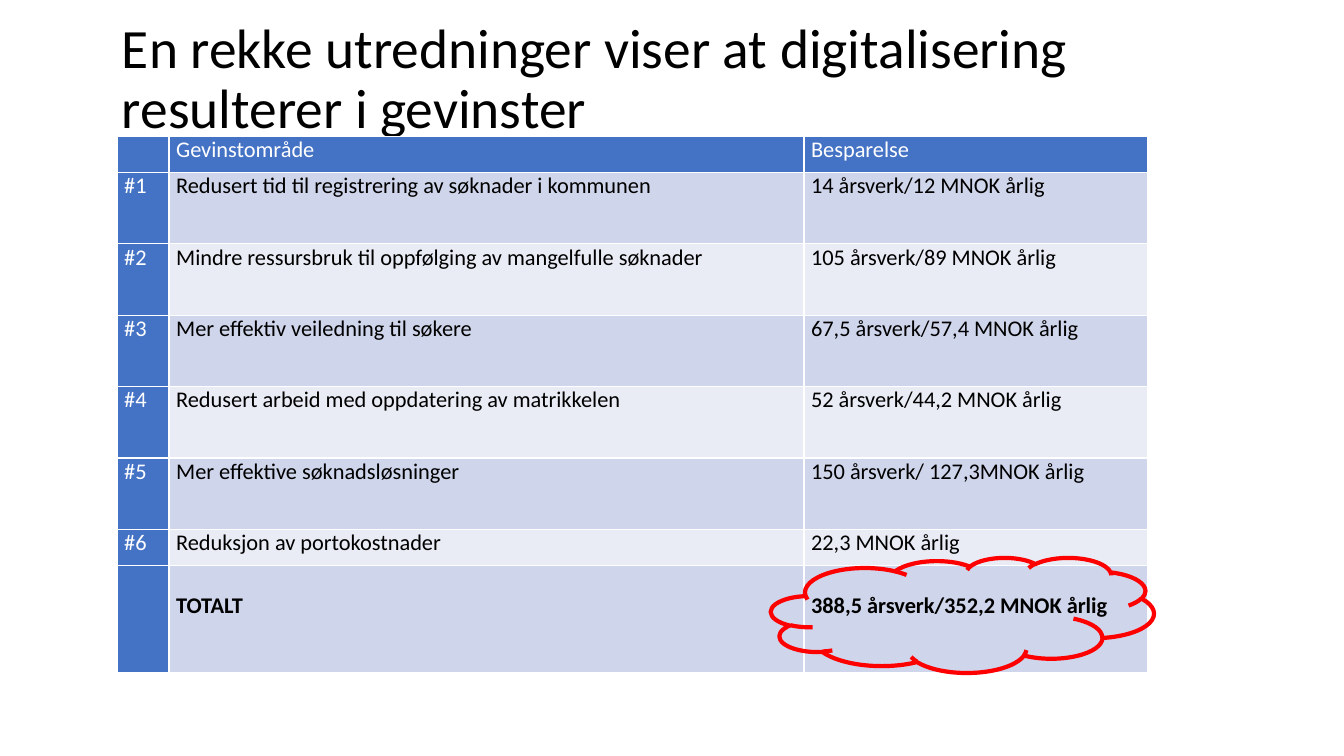
"""Build a slide with a table of yearly savings from digitalisation."""
from pptx import Presentation
from pptx.dml.color import RGBColor
from pptx.enum.shapes import MSO_SHAPE
from pptx.enum.text import MSO_ANCHOR, MSO_AUTO_SIZE, PP_ALIGN
from pptx.util import Cm, Pt

CLOUD = MSO_SHAPE.CLOUD
MIDDLE = MSO_ANCHOR.MIDDLE
NO_AUTOFIT = MSO_AUTO_SIZE.NONE
LEFT = PP_ALIGN.LEFT
TITLE_ONLY = 5

FONT = "Calibri"
BLACK = RGBColor(0x00, 0x00, 0x00)
WHITE = RGBColor(0xFF, 0xFF, 0xFF)
BLUE = RGBColor(0x44, 0x72, 0xC4)
RED = RGBColor(0xFF, 0x00, 0x00)
BANDS = (RGBColor(0xE9, 0xEB, 0xF5), RGBColor(0xCF, 0xD5, 0xEA))

TITLE = "En rekke utredninger viser at digitalisering resulterer i gevinster"
SAVINGS = (
    ("", "Gevinstområde", "Besparelse"),
    ("#1", "Redusert tid til registrering av søknader i kommunen", "14 årsverk/12 MNOK årlig"),
    ("#2", "Mindre ressursbruk til oppfølging av mangelfulle søknader", "105 årsverk/89 MNOK årlig"),
    ("#3", "Mer effektiv veiledning til søkere", "67,5 årsverk/57,4 MNOK årlig"),
    ("#4", "Redusert arbeid med oppdatering av matrikkelen", "52 årsverk/44,2 MNOK årlig"),
    ("#5", "Mer effektive søknadsløsninger", "150 årsverk/ 127,3MNOK årlig"),
    ("#6", "Reduksjon av portokostnader", "22,3 MNOK årlig"),
    ("", "TOTALT", "388,5 årsverk/352,2 MNOK årlig"),
)
COLUMN_WIDTHS = (1.31, 16, 8.66)
ROW_HEIGHTS = (0.9, *[1.8] * 5, 0.9, 2.7)


def format_spans(para, size, color, bold=False):
    """Set the font of every run in a paragraph."""
    for span in para.runs:
        span.font.name = FONT
        span.font.size = Pt(size)
        span.font.bold = bold
        span.font.color.rgb = color


def add_title(page):
    """Place and fill the title placeholder."""
    box = page.shapes.title
    box.left, box.top, box.width, box.height = Cm(2.82), Cm(0.43), Cm(28.55), Cm(3.18)
    frame = box.text_frame
    frame.text = TITLE
    frame.word_wrap = True
    frame.auto_size = NO_AUTOFIT
    frame.vertical_anchor = MIDDLE
    para = frame.paragraphs[0]
    para.alignment = LEFT
    para.line_spacing = 0.9
    format_spans(para, 39.6, BLACK)


def fill_cell(cell, text, fill, color, is_total):
    """Write one table cell with its fill and margins."""
    cell.fill.solid()
    cell.fill.fore_color.rgb = fill
    cell.margin_left = cell.margin_right = Cm(0.18)
    cell.margin_top = Cm(0.68 if is_total else 0)
    cell.margin_bottom = Cm(0)
    cell.text = text
    format_spans(cell.text_frame.paragraphs[0], 16, color, is_total)


def add_savings_table(page):
    """Add the table with blue headings and banded rows."""
    frame = page.shapes.add_table(
        len(SAVINGS), len(COLUMN_WIDTHS), Cm(2.95), Cm(3.44),
        Cm(sum(COLUMN_WIDTHS)), Cm(sum(ROW_HEIGHTS)))
    table = frame.table
    for column, width in zip(table.columns, COLUMN_WIDTHS):
        column.width = Cm(width)
    for row_index, (row, height) in enumerate(zip(table.rows, ROW_HEIGHTS)):
        row.height = Cm(height)
        is_total = row_index == len(SAVINGS) - 1
        for column_index, text in enumerate(SAVINGS[row_index]):
            is_heading = row_index == 0 or column_index == 0
            fill = BLUE if is_heading else BANDS[row_index % 2]
            color = WHITE if is_heading else BLACK
            fill_cell(table.cell(row_index, column_index), text, fill, color, is_total)


def add_total_cloud(page):
    """Outline the total with a red cloud."""
    cloud = page.shapes.add_shape(CLOUD, Cm(19.43), Cm(14.05), Cm(9.65), Cm(2.9))
    cloud.shadow.inherit = False
    cloud.fill.background()
    cloud.line.color.rgb = RED
    cloud.line.width = Pt(3)


def main():
    """Build and save the deck."""
    deck = Presentation()
    deck.slide_width, deck.slide_height = Cm(33.87), Cm(19.05)
    page = deck.slides.add_slide(deck.slide_layouts[TITLE_ONLY])
    add_title(page)
    add_savings_table(page)
    add_total_cloud(page)
    deck.save("out.pptx")


if __name__ == "__main__":
    main()
